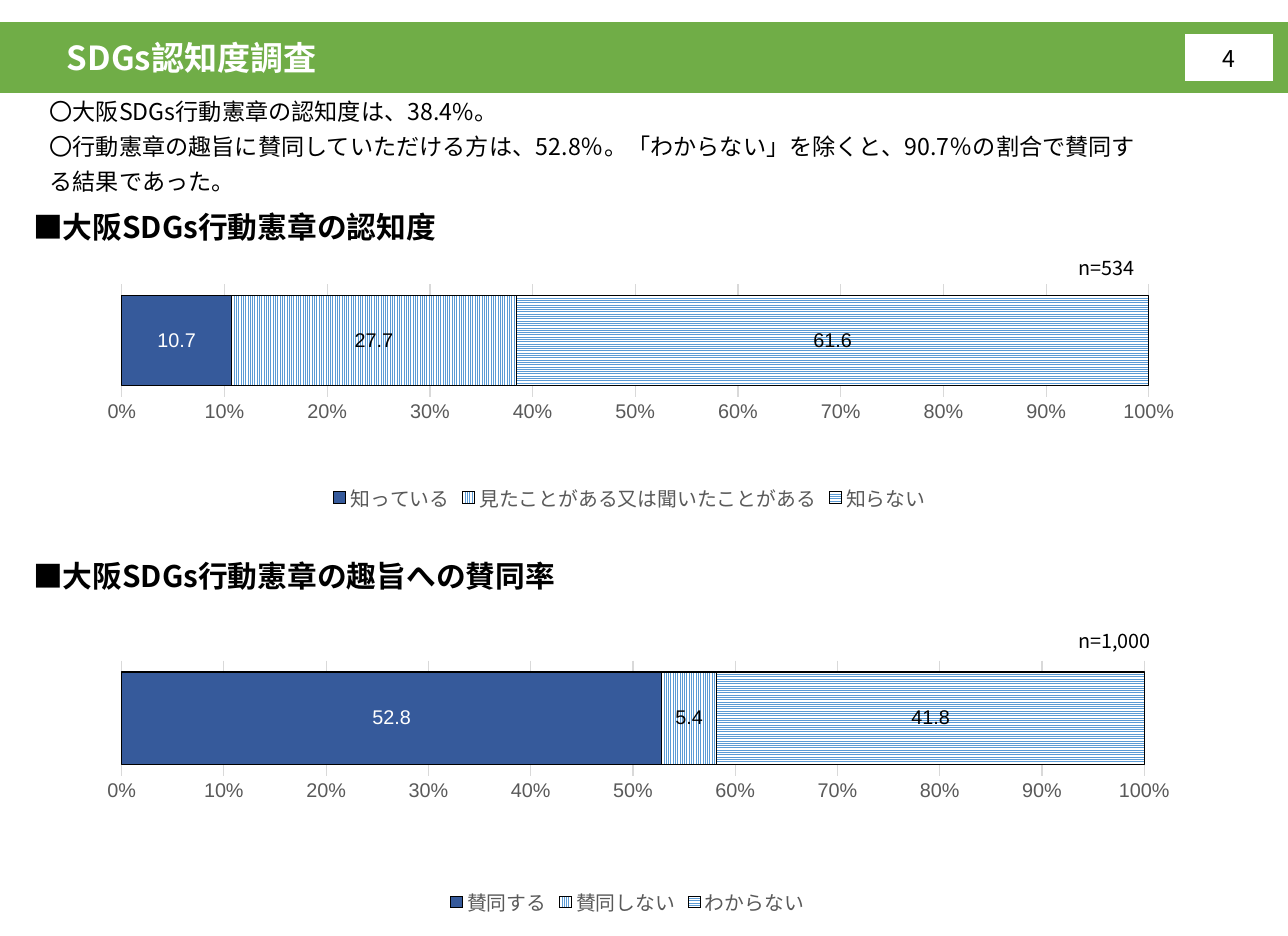
from lxml.etree import SubElement as Sub
from pptx import Presentation
from pptx.chart.data import CategoryChartData as ChartData
from pptx.dml.color import RGBColor
from pptx.enum.chart import XL_CHART_TYPE as Kind, XL_LABEL_POSITION as Spot
from pptx.enum.chart import XL_LEGEND_POSITION as Side, XL_TICK_MARK as Tick
from pptx.enum.dml import MSO_PATTERN_TYPE as Hatch
from pptx.enum.shapes import MSO_SHAPE as Form
from pptx.enum.text import MSO_ANCHOR as Anchor, MSO_AUTO_SIZE as Fit, PP_ALIGN as Align
from pptx.oxml import parse_xml
from pptx.oxml.ns import nsdecls, qn
from pptx.util import Pt

GREEN = RGBColor(0x70, 0xAD, 0x47)
NAVY = RGBColor(0x36, 0x5A, 0x9B)
BLUE = RGBColor(0x5B, 0x9B, 0xD5)
GREY = RGBColor(0x59, 0x59, 0x59)
PALE = RGBColor(0xD9, 0xD9, 0xD9)
WHITE = RGBColor(0xFF, 0xFF, 0xFF)
BLACK = RGBColor(0, 0, 0)


class Page:
    face = "Noto Sans CJK JP"
    chart_face = "Arial"
    hatches = (None, Hatch.NARROW_VERTICAL, Hatch.NARROW_HORIZONTAL)

    def __init__(self, deck):
        self.slide = deck.slides.add_slide(deck.slide_layouts[5])
        self.shapes = self.slide.shapes

    def place(self, shape, box):
        shape.left, shape.top, shape.width, shape.height = map(Pt, box)

    def paint(self, shape, fill, line, width):
        shape.fill.solid()
        shape.fill.fore_color.rgb = fill
        shape.line.color.rgb = line
        shape.line.width = Pt(width)

    def text(self, frame, lines, size, color=BLACK, bold=False, align=Align.LEFT, pitch=None):
        frame.word_wrap = True
        frame.auto_size = Fit.NONE
        for i, line in enumerate(lines):
            para = frame.add_paragraph() if i else frame.paragraphs[0]
            para.alignment = align
            if pitch:
                para.line_spacing = Pt(pitch)
            run = para.add_run()
            run.text = line
            self.style(run.font, size, color, self.face)
            run.font.bold = bold
            Sub(run.font._element, qn("a:ea")).set("typeface", self.face)

    def style(self, font, size, color, face):
        font.size = Pt(size)
        font.name = face
        font.color.rgb = color

    def title(self, text, box):
        shape = self.shapes.title
        self.place(shape, box)
        self.paint(shape, GREEN, GREEN, 0.5)
        frame = shape.text_frame
        frame.vertical_anchor = Anchor.MIDDLE
        frame.margin_left = Pt(40.5)
        self.text(frame, [text], 20, WHITE, True)

    def badge(self, text, box):
        shape = self.shapes.add_shape(Form.RECTANGLE, *map(Pt, box))
        shape.shadow.inherit = False
        self.paint(shape, WHITE, GREEN, 0.75)
        shape.text_frame.vertical_anchor = Anchor.MIDDLE
        self.text(shape.text_frame, [text], 14, align=Align.CENTER)

    def body(self, lines, box):
        frame = self.shapes.add_textbox(*map(Pt, box)).text_frame
        frame.vertical_anchor = Anchor.MIDDLE
        self.text(frame, lines, 14, pitch=21)

    def label(self, text, box, size, bold=False):
        frame = self.shapes.add_textbox(*map(Pt, box)).text_frame
        frame.margin_right = 0
        self.text(frame, [text], size, bold=bold)

    def chart(self, parts, box, plot):
        data = ChartData(number_format="0.0")
        data.categories = ["1"]
        for name, value in parts:
            data.add_series(name, [value])
        chart = self.shapes.add_chart(Kind.BAR_STACKED_100, *map(Pt, box), data).chart
        chart.has_title = False
        self.style(chart.font, 10, BLACK, self.chart_face)
        chart.has_legend = True
        chart.legend.position = Side.BOTTOM
        chart.legend.include_in_layout = False
        self.style(chart.legend.font, 12, GREY, self.chart_face)
        self.axes(chart)
        bars = chart.plots[0]
        bars.gap_width, bars.overlap, bars.vary_by_categories = 25, 100, False
        for series, hatch in zip(bars.series, self.hatches):
            self.bar(series, hatch)
        self.frame(chart, plot)

    def axes(self, chart):
        chart.category_axis.visible = False
        axis = chart.value_axis
        axis.minimum_scale, axis.maximum_scale, axis.major_unit = 0, 1, 0.1
        axis.major_tick_mark = axis.minor_tick_mark = Tick.NONE
        axis.format.line.fill.background()
        axis.has_major_gridlines = True
        grid = axis.major_gridlines.format.line
        grid.color.rgb, grid.width = PALE, Pt(0.75)
        marks = axis.tick_labels
        marks.number_format, marks.number_format_is_linked = "0%", False
        self.style(marks.font, 12, GREY, self.chart_face)

    def bar(self, series, hatch):
        fill, line = series.format.fill, series.format.line
        if hatch:
            fill.patterned()
            fill.pattern = hatch
            fill.fore_color.rgb, fill.back_color.rgb = BLUE, WHITE
        else:
            fill.solid()
            fill.fore_color.rgb = NAVY
        line.color.rgb, line.width = BLACK, Pt(0.75)
        tags = series.data_labels
        tags.show_value, tags.position = True, Spot.CENTER
        tags.number_format, tags.number_format_is_linked = "0.0", False
        self.style(tags.font, 12, BLACK if hatch else WHITE, self.chart_face)

    def frame(self, chart, plot):
        area = chart.element.find(".//" + qn("c:plotArea"))
        for old in area.findall(qn("c:layout")):
            area.remove(old)
        layout = parse_xml(f"<c:layout {nsdecls('c')}><c:manualLayout/></c:layout>")
        rules = [("layoutTarget", "inner"), ("xMode", "edge"), ("yMode", "edge")]
        for tag, value in rules + list(zip("xywh", plot)):
            Sub(layout[0], qn("c:" + tag)).set("val", str(value))
        area.insert(0, layout)


def main():
    deck = Presentation()
    deck.slide_width, deck.slide_height = Pt(779.76), Pt(566.64)
    page = Page(deck)
    page.title("SDGs認知度調査", (0, 13.7, 779.76, 42.5))
    page.badge("4", (717, 20.2, 54, 29.5))
    page.body([
        "〇大阪SDGs行動憲章の認知度は、38.4%。",
        "〇行動憲章の趣旨に賛同していただける方は、52.8％。「わからない」を除くと、90.7％の割合で賛同する結果であった。",
    ], (23, 67, 678, 39))

    known = [("知っている", 10.7), ("見たことがある又は聞いたことがある", 27.7), ("知らない", 61.6)]
    agreed = [("賛同する", 52.8), ("賛同しない", 5.4), ("わからない", 41.8)]
    parts = [
        ("■大阪SDGs行動憲章の認知度", 123, "n=534", 151.2, known,
         (39.6, 154.8, 683.3, 158.4), (0.05, 0.11, 0.91, 0.43)),
        ("■大阪SDGs行動憲章の趣旨への賛同率", 334, "n=1,000", 377.3, agreed,
         (39.6, 388, 680.4, 170), (0.05, 0.07, 0.91, 0.41)),
    ]
    for head, top, count, low, data, box, plot in parts:
        page.label(head, (13, top, 465, 29), 18, True)
        page.chart(data, box, plot)
        page.label(count, (645.8, low, 71.3, 21.6), 12)
    deck.save("out.pptx")


if __name__ == "__main__":
    main()
